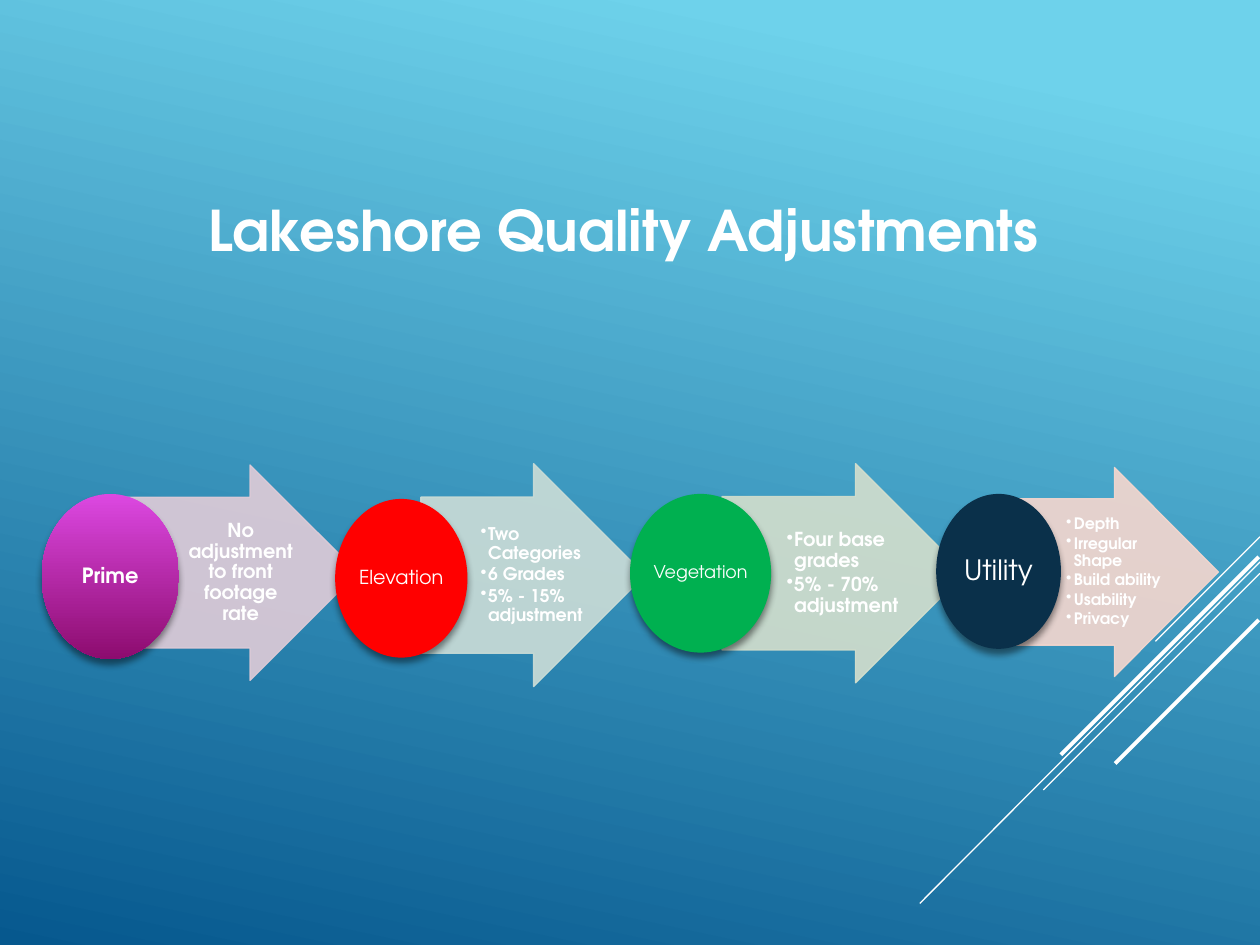
from lxml.etree import SubElement
from pptx import Presentation
from pptx.dml.color import RGBColor as RGB
from pptx.enum.shapes import MSO_CONNECTOR as Conn, MSO_SHAPE as Shape
from pptx.enum.text import MSO_ANCHOR as Anchor, MSO_AUTO_SIZE as Auto, PP_ALIGN as Align
from pptx.oxml.ns import qn
from pptx.util import Inches, Pt

FONT = "TeX Gyre Adventor"
COLS, ROWS = 40, 30
WIDE, HIGH = Inches(10), Inches(7.5)
HUES = {
    "white": "FFFFFF", "black": "000000", "sky": "6ED2EB", "deep": "06588E",
    "pink": "DC48E1", "plum": "8D0C6F", "red": "FF0000", "green": "00B050",
    "navy": "0A304A", "mauve": "E1CCD8", "mint": "CCDDD7", "sage": "D4DFCD",
    "blush": "F6D7CE",
}

# start column, start row, end column, end row, weight
RAYS = [
    (40, 17.04, 36.68, 20.36, 0.75),
    (40, 17.84, 29.2, 28.68, 0.75),
    (40, 18.2, 33.12, 25.08, 0.75),
    (39.96, 17.68, 33.68, 23.96, 2.25),
    (39.96, 19.68, 35.4, 24.24, 2.25),
]

# arrow: grid box, hue, lines, size, bullets; circle: grid box, hues, label format
STEPS = [
    dict(arrow=(3.92, 14.76, 7.44, 6.84), tint="mauve", size=11, dots=False,
         notes=["No adjustment to front footage rate"],
         disc=(1.32, 15.68, 4.36, 5.24), hues=["pink", "plum"],
         name="Prime", label=dict(size=12, bold=True)),
    dict(arrow=(13.36, 14.72, 7.12, 7.08), tint="mint", size=10, dots=True,
         notes=["Two Categories", "6 Grades", "5% - 15% adjustment"],
         disc=(10.64, 15.84, 4.2, 5.04), hues=["red"],
         name="Elevation", label=dict(size=11)),
    dict(arrow=(22.92, 14.72, 7.72, 6.96), tint="sage", size=11, dots=True,
         notes=["Four base grades", "5% - 70% adjustment"],
         disc=(20, 15.68, 4.48, 5.04), hues=["green"],
         name="Vegetation", label=dict(size=10)),
    dict(arrow=(32.08, 14.84, 6.6, 6.64), tint="blush", size=9, dots=True,
         notes=["Depth", "Irregular Shape", "Build ability", "Usability", "Privacy"],
         disc=(29.72, 15.68, 3.96, 4.92), hues=["navy"],
         name="Utility", label=dict(size=16)),
]


def rgb(hue):
    return RGB.from_string(HUES[hue])


def place(col, row, wide, high):
    """Turn a box in grid units into slide lengths."""
    return [int(n * full / parts) for n, full, parts in
            ((col, WIDE, COLS), (row, HIGH, ROWS), (wide, WIDE, COLS), (high, HIGH, ROWS))]


def blend(fill, stops, angle):
    """Fill with a gradient; the angle runs counter-clockwise."""
    fill.gradient()
    fill.gradient_angle = angle
    for stop, (spot, hue) in zip(fill.gradient_stops, stops):
        stop.position = spot
        stop.color.rgb = rgb(hue)


def fade(fill, share):
    """Make a solid fill partly opaque."""
    tone = fill.fore_color._xFill.find(qn("a:srgbClr"))
    SubElement(tone, qn("a:alpha"), val=str(share * 1000))


def bullet(para):
    props = para._p.get_or_add_pPr()
    props.set("marL", str(Inches(0.06)))
    props.set("indent", str(-Inches(0.06)))
    SubElement(props, qn("a:buChar"), char="•")


def write(shape, lines, size, bold=False, align=Align.CENTER, anchor=Anchor.MIDDLE,
          wrap=True, dots=False, pads=(0.01,) * 4, lead=0.9, after=0):
    frame = shape.text_frame
    frame.word_wrap, frame.auto_size = wrap, Auto.NONE
    frame.vertical_anchor = anchor
    (frame.margin_left, frame.margin_top,
     frame.margin_right, frame.margin_bottom) = map(Inches, pads)
    for i, line in enumerate(lines):
        para = frame.add_paragraph() if i else frame.paragraphs[0]
        if dots:
            bullet(para)
        para.alignment = align
        para.line_spacing, para.space_after = lead, Pt(after)
        run = para.add_run()
        run.text = line
        font = run.font
        font.name, font.size, font.bold = FONT, Pt(size), bold
        font.color.rgb = rgb("white")


def add_ray(slide, x1, y1, x2, y2, weight):
    start, end = place(x1, y1, 0, 0)[:2], place(x2, y2, 0, 0)[:2]
    ray = slide.shapes.add_connector(Conn.STRAIGHT, *start, *end)
    ray.line.color.rgb = rgb("white")
    ray.line.width = Pt(weight)
    SubElement(ray._element.spPr, qn("a:effectLst"))


def add_arrow(slide, box, tint, notes, size, dots):
    arrow = slide.shapes.add_shape(Shape.RIGHT_ARROW, *place(*box))
    arrow.adjustments[0], arrow.adjustments[1] = 0.7, 0.5
    arrow.shadow.inherit = False
    arrow.line.width = Pt(0.75)
    for fill in (arrow.fill, arrow.line.fill):
        fill.solid()
        fill.fore_color.rgb = rgb(tint)
        fade(fill, 90)

    col, row, wide, high = box
    area = place(col + wide / 4, row + 0.15 * high, 0.49 * wide, 0.7 * high)
    write(slide.shapes.add_textbox(*area), notes, size, bold=True, dots=dots,
          align=Align.LEFT if dots else Align.CENTER,
          pads=(0.03, 0.01, 0.01, 0.01), after=0.15 * size)


def add_disc(slide, box, hues, name, label):
    disc = slide.shapes.add_shape(Shape.OVAL, *place(*box))
    disc.line.fill.background()
    if len(hues) > 1:
        blend(disc.fill, zip((0, 1), hues), 270)
    else:
        disc.fill.solid()
        disc.fill.fore_color.rgb = rgb(hues[0])
    disc.shadow.inherit = False
    glow = SubElement(disc._element.spPr.find(qn("a:effectLst")), qn("a:outerShdw"),
                      blurRad=str(Pt(4)), dist=str(Pt(3)), dir="5400000", rotWithShape="0")
    tone = SubElement(glow, qn("a:srgbClr"), val=HUES["black"])
    SubElement(tone, qn("a:alpha"), val="46000")
    write(disc, [name], **label)


def add_title(slide, text):
    title = slide.shapes.title
    title.left, title.top, title.width, title.height = place(6, 6, 27.6, 2.56)
    write(title, [text], 32, bold=True, anchor=Anchor.TOP, wrap=False,
          pads=(0.1, 0.05, 0.1, 0.05), lead=1.0)


def main():
    deck = Presentation()
    deck.slide_width, deck.slide_height = WIDE, HIGH
    slide = deck.slides.add_slide(deck.slide_layouts[5])
    blend(slide.background.fill, [(0.1, "sky"), (1, "deep")], 258)
    for ray in RAYS:
        add_ray(slide, *ray)
    add_title(slide, "Lakeshore Quality Adjustments")
    for step in STEPS:
        add_arrow(slide, step["arrow"], step["tint"], step["notes"],
                  step["size"], step["dots"])
        add_disc(slide, step["disc"], step["hues"], step["name"], step["label"])
    deck.save("out.pptx")


if __name__ == "__main__":
    main()
